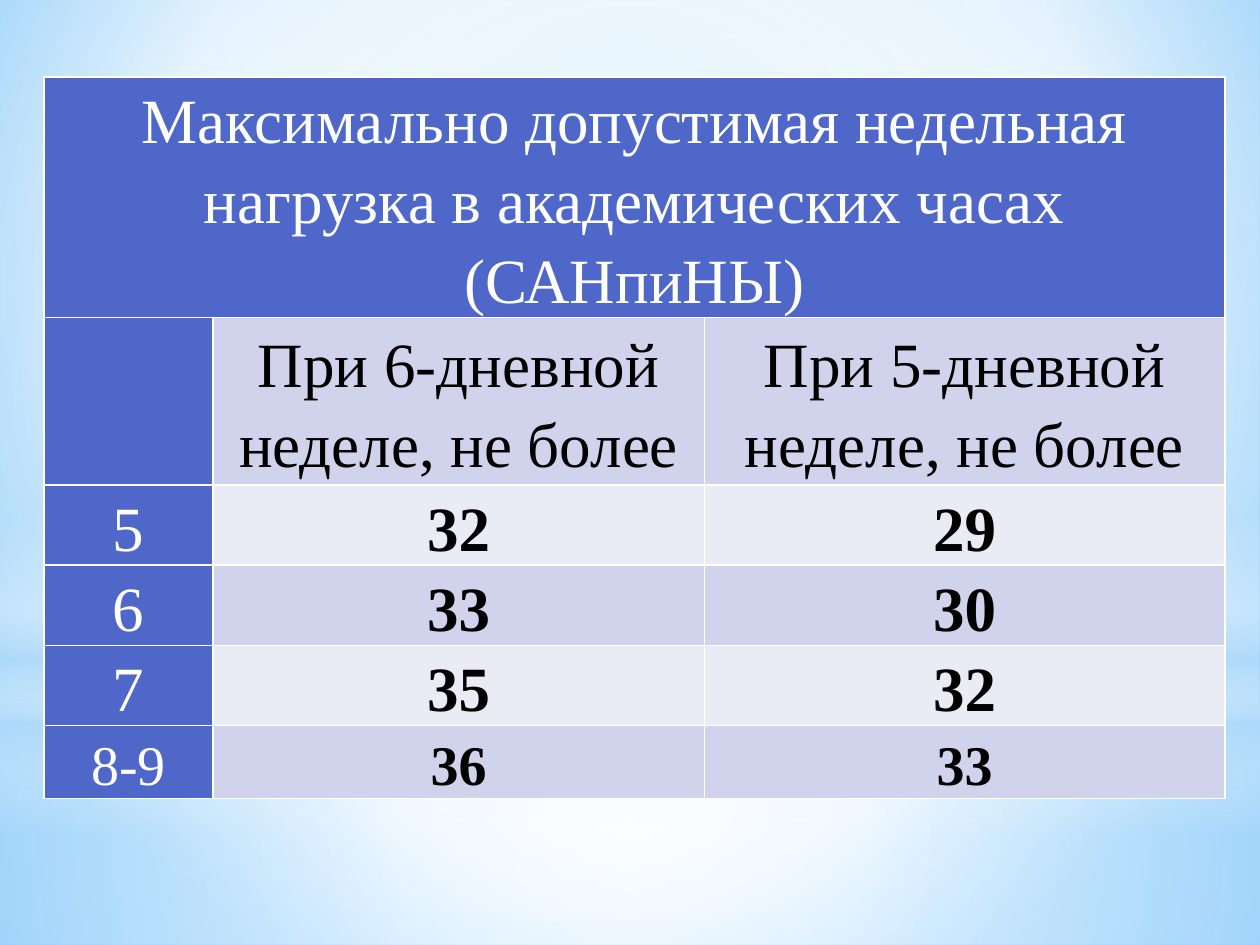
from lxml import etree
from pptx import Presentation
from pptx.dml.color import RGBColor
from pptx.enum import shapes, text
from pptx.oxml import ns
from pptx.util import Cm, Pt

# Content
HEADING = "Максимально допустимая недельная нагрузка в академических часах (САНпиНЫ)"
COLUMN_HEADS = ("", "При 6-дневной неделе, не более", "При 5-дневной неделе, не более")
HOURS = [("5", "32", "29"), ("6", "33", "30"), ("7", "35", "32"), ("8-9", "36", "33")]

THEME = dict(
    font="Times New Roman", size=36, small=32, line_spacing=1.15, after=10,
    blue="4E67C8", dark_band="D0D3EB", light_band="E9EBF5",
    white="FFFFFF", black="000000", border=1,
)
WHITE, SKY = THEME["white"], "B4DCFA"

# Layout in centimetres
SLIDE = (25.4, 19.05)
TABLE_AT = (0.89, 1.55)
COLUMNS = (3.4, 9.91, 10.49)
ROWS = (2.84, 3.38) + (1.47,) * len(HOURS)

# Gradients: stops are (position, colour, opacity), centre is l, t, r, b
BACKDROP = dict(stops=[(0, "9ED5FF", 100), (60, WHITE, 100), (100, "5BB9FF", 100)],
                centre=(20, 10, 20, 60))
MIDDLE = (50, 50, 50, 50)
RECT, OVAL = shapes.MSO_SHAPE.RECTANGLE, shapes.MSO_SHAPE.OVAL
GLOWS = [
    (RECT, (0, 14.17, 25.4, 4.88),
     dict(stops=[(0, WHITE, 91), (37, WHITE, 76), (100, SKY, 79)], centre=MIDDLE)),
    (RECT, (0, 0, 25.4, 14.17),
     dict(stops=[(0, WHITE, 89), (48, WHITE, 62), (100, SKY, 79)], centre=MIDDLE)),
    (RECT, (0, 10.46, 25.4, 6.35),
     dict(stops=[(0, WHITE, 0), (29, WHITE, 30), (45, SKY, 40), (55, WHITE, 26),
                 (65, SKY, 60), (100, WHITE, 0)], angle=90)),
    (OVAL, (0, 4.44, 25.4, 14.17),
     dict(stops=[(0, WHITE, 100), (56, WHITE, 0)], centre=MIDDLE)),
]


def add(parent, tag, **attributes):
    values = {key: str(value) for key, value in attributes.items()}
    return etree.SubElement(parent, ns.qn(tag), values)


def set_gradient(holder, stops, centre=None, angle=0):
    """Replace the solid fill inside holder by a gradient."""
    solid = holder.find(ns.qn("a:solidFill"))
    gradient = etree.Element(ns.qn("a:gradFill"), rotWithShape="1")
    stop_list = add(gradient, "a:gsLst")
    for position, colour, opacity in stops:
        stop = add(stop_list, "a:gs", pos=position * 1000)
        add(add(stop, "a:srgbClr", val=colour), "a:alpha", val=opacity * 1000)
    if centre:
        shade = add(gradient, "a:path", path="circle")
        add(shade, "a:fillToRect", **{side: part * 1000 for side, part in zip("ltrb", centre)})
    else:
        add(gradient, "a:lin", ang=angle * 60000, scaled=0)
    holder.replace(solid, gradient)


def set_borders(cell):
    properties = cell._tc.get_or_add_tcPr()
    for index, side in enumerate("LRTB"):
        line = etree.Element(ns.qn(f"a:ln{side}"), w=str(Pt(THEME["border"])))
        add(add(line, "a:solidFill"), "a:srgbClr", val=WHITE)
        properties.insert(index, line)


def fill_cell(cell, words, fill, colour, size, bold=False, after=THEME["after"]):
    cell.fill.solid()
    cell.fill.fore_color.rgb = RGBColor.from_string(fill)
    set_borders(cell)
    if not words:
        return
    cell.margin_left = cell.margin_right = Cm(0.18)
    cell.margin_top = cell.margin_bottom = 0
    if after:
        cell.vertical_anchor = text.MSO_ANCHOR.MIDDLE
    paragraph = cell.text_frame.paragraphs[0]
    paragraph.alignment = text.PP_ALIGN.CENTER
    paragraph.line_spacing = THEME["line_spacing"]
    paragraph.space_after = Pt(after)
    run = paragraph.add_run()
    run.text = words
    run.font.name, run.font.size, run.font.bold = THEME["font"], Pt(size), bold
    run.font.color.rgb = RGBColor.from_string(colour)


def add_backdrop(slide):
    slide.background.fill.solid()
    set_gradient(slide.element.find(".//" + ns.qn("p:bgPr")), **BACKDROP)
    for kind, box, gradient in GLOWS:
        glow = slide.shapes.add_shape(kind, *map(Cm, box))
        glow.shadow.inherit = False
        glow.line.fill.background()
        glow.fill.solid()
        set_gradient(glow.element.spPr, **gradient)


def add_hours_table(slide):
    frame = slide.shapes.add_table(len(ROWS), len(COLUMNS), *map(Cm, TABLE_AT),
                                   Cm(sum(COLUMNS)), Cm(sum(ROWS)))
    table = frame.table
    table.first_row = table.horz_banding = False
    for column, width in zip(table.columns, COLUMNS):
        column.width = Cm(width)
    for row, height in zip(table.rows, ROWS):
        row.height = Cm(height)

    # Heading across all columns
    table.cell(0, 0).merge(table.cell(0, len(COLUMNS) - 1))
    for column in range(len(COLUMNS)):
        fill_cell(table.cell(0, column), "" if column else HEADING,
                  THEME["blue"], WHITE, THEME["size"], after=0)

    # Column heads, then one row per grade in alternating bands
    for index, row in enumerate([COLUMN_HEADS] + HOURS):
        band = THEME["light_band"] if index % 2 else THEME["dark_band"]
        size = THEME["small"] if index == len(HOURS) else THEME["size"]
        for column, words in enumerate(row):
            value = column > 0
            fill_cell(table.cell(index + 1, column), words,
                      band if value else THEME["blue"],
                      THEME["black"] if value else WHITE,
                      size, bold=value and index > 0)


def main():
    deck = Presentation()
    deck.slide_width, deck.slide_height = map(Cm, SLIDE)
    slide = deck.slides.add_slide(deck.slide_layouts.get_by_name("Blank"))
    add_backdrop(slide)
    add_hours_table(slide)
    deck.save("out.pptx")


if __name__ == "__main__":
    main()
